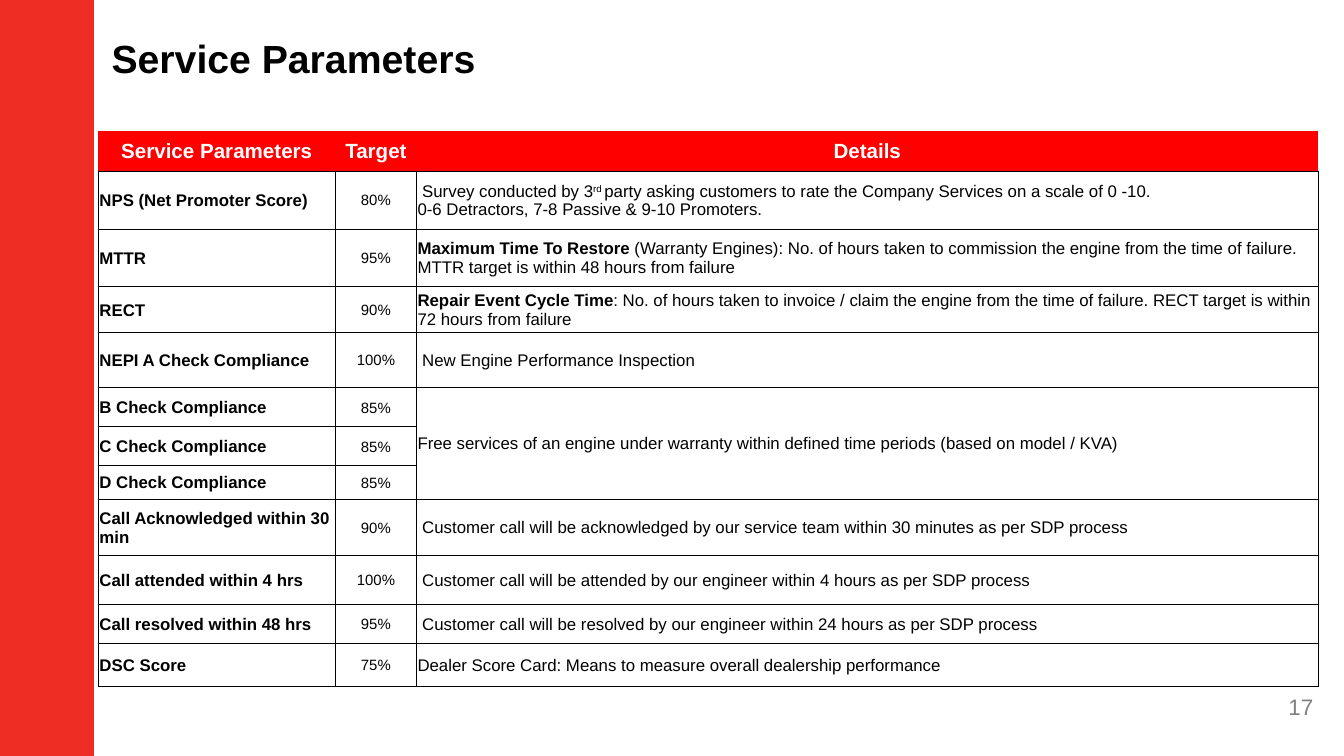
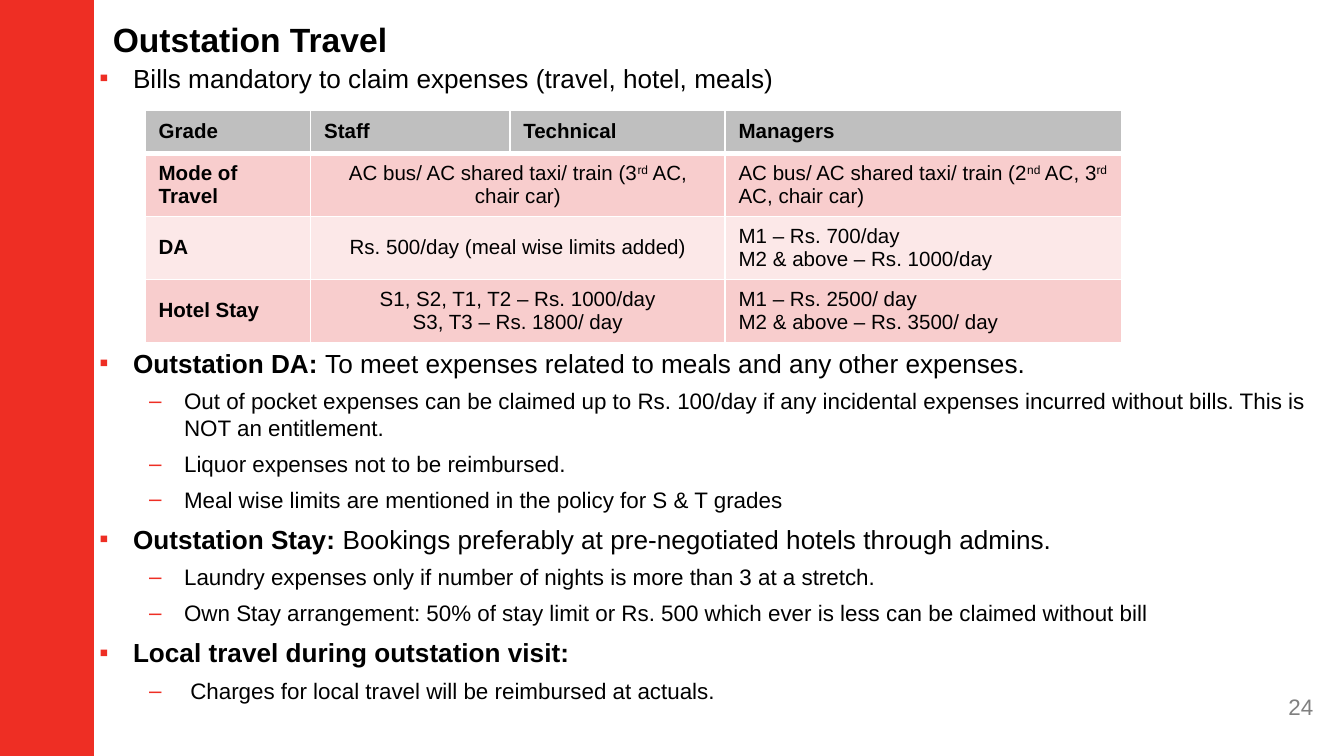
from dataclasses import dataclass

from lxml import etree
from pptx import Presentation
from pptx import util as u
from pptx.dml.color import RGBColor
from pptx.enum import shapes, text
from pptx.oxml.ns import qn

WIDTH, HEIGHT = u.Inches(10), u.Inches(5.625)
FONT = "Arial"
COLORS = {
    "band": "EE2E24", "header": "FF0000", "ink": "000000", "paper": "FFFFFF",
    "number": "808080", "grey": "BFBFBF", "rose": "F8CDCD", "blush": "FCE8E8",
}
LEFT, CENTER, RIGHT = text.PP_ALIGN.LEFT, text.PP_ALIGN.CENTER, text.PP_ALIGN.RIGHT


@dataclass
class Box:
    """An area given in percent of the slide's width and height."""
    left: float
    top: float
    width: float
    height: float

    def place(self):
        return (int(WIDTH * self.left / 100), int(HEIGHT * self.top / 100),
                int(WIDTH * self.width / 100), int(HEIGHT * self.height / 100))


BAND = Box(0, 0, 7, 100)
NUMBER = Box(92.6, 90.84, 6.1, 5.2)


def rgb(name):
    return RGBColor.from_string(COLORS[name])


# Text: a line is a string or a list of (words, style) with style "", "b" or "sup"
def write_line(para, line, size, color="ink", bold=False, align=LEFT):
    para.alignment = align
    spans = [(line, "")] if isinstance(line, str) else line
    for words, style in spans:
        span = para.add_run()
        span.text = words
        span.font.name, span.font.size = FONT, u.Pt(size)
        span.font.bold = bold or style == "b"
        span.font.color.rgb = rgb(color)
        if style == "sup":
            span._r.get_or_add_rPr().set("baseline", "30000")


def next_para(frame, index):
    return frame.paragraphs[0] if index == 0 else frame.add_paragraph()


def text_frame(page, box, inset=True):
    frame = page.shapes.add_textbox(*box.place()).text_frame
    frame.word_wrap = True
    if not inset:
        frame.margin_left = frame.margin_right = 0
        frame.margin_top = frame.margin_bottom = 0
    return frame


# Shared frame of every slide: band, title, page number
def add_page(deck, title, box, size, number):
    page = deck.slides.add_slide(deck.slide_layouts[5])
    band = page.shapes.add_shape(shapes.MSO_SHAPE.RECTANGLE, *BAND.place())
    band.shadow.inherit = False
    band.fill.solid()
    band.fill.fore_color.rgb = rgb("band")
    band.line.fill.background()

    heading = page.shapes.title
    heading.left, heading.top, heading.width, heading.height = box.place()
    frame = heading.text_frame
    frame.word_wrap = True
    frame.auto_size = text.MSO_AUTO_SIZE.NONE
    frame.vertical_anchor = text.MSO_ANCHOR.TOP
    write_line(frame.paragraphs[0], title, size, bold=True)

    write_line(text_frame(page, NUMBER).paragraphs[0], number, 12, "number", align=RIGHT)
    return page


# Tables
def set_borders(cell, borders):
    """Borders map a side (L, R, T, B) to (colour, points); other sides are bare."""
    props = cell._tc.get_or_add_tcPr()
    for index, side in enumerate("LRTB"):
        line = etree.Element(qn(f"a:ln{side}"))
        if side in borders:
            color, points = borders[side]
            line.set("w", str(u.Pt(points)))
            fill = etree.SubElement(line, qn("a:solidFill"))
            etree.SubElement(fill, qn("a:srgbClr")).set("val", COLORS[color])
        else:
            etree.SubElement(line, qn("a:noFill"))
        props.insert(index, line)


def add_grid(page, box, columns, rows, merges):
    """Columns and rows are weights that share out the box."""
    left, top, width, height = box.place()
    table = page.shapes.add_table(len(rows), len(columns), left, top, width, height).table
    table.horz_banding = False
    for column, weight in zip(table.columns, columns):
        column.width = int(width * weight / sum(columns))
    for row, weight in zip(table.rows, rows):
        row.height = int(height * weight / sum(rows))
    for first, last in merges:
        table.cell(*first).merge(table.cell(*last))
    return table


def fill_cell(cell, lines, size, fill, borders, margins=None, **style):
    cell.vertical_anchor = text.MSO_ANCHOR.MIDDLE
    if margins:
        (cell.margin_left, cell.margin_right,
         cell.margin_top, cell.margin_bottom) = map(u.Inches, margins)
    if fill:
        cell.fill.solid()
        cell.fill.fore_color.rgb = rgb(fill)
    else:
        cell.fill.background()
    set_borders(cell, borders)
    for index, line in enumerate(lines):
        write_line(next_para(cell.text_frame, index), line, size, **style)


# Service parameters: name, target, detail lines, row weight
PARAMETERS = [
    ("NPS (Net Promoter Score)", "80%",
     [[(" Survey conducted by 3", ""), ("rd ", "sup"),
       ("party asking customers to rate the Company Services on a scale of 0 -10.", "")],
      "0-6 Detractors, 7-8 Passive & 9-10 Promoters."], 0.43),
    ("MTTR", "95%",
     [[("Maximum Time To Restore", "b"),
       (" (Warranty Engines): No. of hours taken to commission the engine from the time "
        "of failure. MTTR target is within 48 hours from failure", "")]], 0.43),
    ("RECT", "90%",
     [[("Repair Event Cycle Time", "b"),
       (": No. of hours taken to invoice / claim the engine from the time of failure. "
        "RECT target is within 72 hours from failure", "")]], 0.34),
    ("NEPI A Check Compliance", "100%", [" New Engine Performance Inspection"], 0.41),
    ("B Check Compliance", "85%",
     ["Free services of an engine under warranty within defined time periods "
      "(based on model / KVA)"], 0.29),
    ("C Check Compliance", "85%", [], 0.29),
    ("D Check Compliance", "85%", [], 0.25),
    ("Call Acknowledged within 30 min", "90%",
     [" Customer call will be acknowledged by our service team within 30 minutes "
      "as per SDP process"], 0.42),
    ("Call attended within 4 hrs", "100%",
     [" Customer call will be attended by our engineer within 4 hours as per SDP process"], 0.36),
    ("Call resolved within 48 hrs", "95%",
     [" Customer call will be resolved by our engineer within 24 hours as per SDP process"], 0.29),
    ("DSC Score", "75%",
     ["Dealer Score Card: Means to measure overall dealership performance"], 0.32),
]


def add_parameter_table(page, box):
    rows = [0.3] + [entry[3] for entry in PARAMETERS]
    table = add_grid(page, box, [1.77, 0.6, 6.72], rows, [((5, 2), (7, 2))])
    margins = (0.01, 0.01, 0.01, 0)
    rule = ("ink", 0.5)
    for column, name in enumerate(["Service Parameters", "Target", "Details"]):
        fill_cell(table.cell(0, column), [name], 11, "header", {"B": rule}, margins,
                  color="paper", bold=True, align=CENTER)
    borders = dict.fromkeys("LRTB", rule)
    for row, (name, target, details, _) in enumerate(PARAMETERS, 1):
        fill_cell(table.cell(row, 0), [name], 9, None, borders, margins, bold=True)
        fill_cell(table.cell(row, 1), [target], 8, None, borders, margins, align=CENTER)
        fill_cell(table.cell(row, 2), details, 9, None, borders, margins)


# Travel limits: label, staff and technical, managers
LIMITS = [
    ("Mode of Travel",
     [[("AC bus/ AC shared taxi/ train (3", ""), ("rd", "sup"), (" AC, chair car)", "")]],
     [[("AC bus/ AC shared taxi/ train (2", ""), ("nd", "sup"), (" AC, 3", ""),
       ("rd", "sup"), (" AC, chair car)", "")]]),
    ("DA", ["Rs. 500/day (meal wise limits added)"],
     ["M1 – Rs. 700/day", "M2 & above – Rs. 1000/day"]),
    ("Hotel Stay", ["S1, S2, T1, T2 – Rs. 1000/day", "S3, T3 – Rs. 1800/ day"],
     ["M1 – Rs. 2500/ day", "M2 & above – Rs. 3500/ day"]),
]


def add_limit_table(page, box):
    merges = [((row, 1), (row, 2)) for row in range(1, len(LIMITS) + 1)]
    table = add_grid(page, box, [1.23, 1.48, 1.6, 2.95], [0.32] + [0.47] * len(LIMITS), merges)
    thin, thick = ("paper", 1), ("paper", 3)
    borders = dict.fromkeys("LRTB", thin)
    for column, name in enumerate(["Grade", "Staff", "Technical", "Managers"]):
        fill_cell(table.cell(0, column), [name], 11, "grey", borders | {"B": thick}, bold=True)
    for row, (label, staff, managers) in enumerate(LIMITS, 1):
        fill = "rose" if row % 2 else "blush"
        edges = borders | {"T": thick} if row == 1 else borders
        fill_cell(table.cell(row, 0), [label], 11, fill, edges, bold=True)
        fill_cell(table.cell(row, 1), staff, 11, fill, edges, align=CENTER)
        fill_cell(table.cell(row, 2), [], 11, fill, edges)
        fill_cell(table.cell(row, 3), managers, 11, fill, edges)


# Bulleted text: level -> mark, left margin, hanging indent, text size
LEVELS = [("▪", 0.25, -0.25, 14), ("–", 0.63, -0.26, 12)]
INTRO = [(0, "Bills mandatory to claim expenses (travel, hotel, meals)")]
RULES = [
    (0, [("Outstation DA: ", "b"),
         ("To meet expenses related to meals and any other expenses.", "")]),
    (1, "Out of pocket expenses can be claimed up to Rs. 100/day if any incidental expenses "
        "incurred without bills. This is NOT an entitlement."),
    (1, "Liquor expenses not to be reimbursed."),
    (1, "Meal wise limits are mentioned in the policy for S & T grades"),
    (0, [("Outstation Stay: ", "b"),
         ("Bookings preferably at pre-negotiated hotels through admins.", "")]),
    (1, "Laundry expenses only if number of nights is more than 3 at a stretch."),
    (1, "Own Stay arrangement: 50% of stay limit or Rs. 500 which ever is less can be claimed "
        "without bill"),
    (0, [("Local travel during outstation visit:", "b")]),
    (1, " Charges for local travel will be reimbursed at actuals."),
]


def add_bullets(page, box, items):
    frame = text_frame(page, box, inset=False)
    for index, (level, line) in enumerate(items):
        mark, margin, indent, size = LEVELS[level]
        para = next_para(frame, index)
        para.level = level
        props = para._p.get_or_add_pPr()
        props.set("marL", str(u.Inches(margin)))
        props.set("indent", str(u.Inches(indent)))
        color = etree.SubElement(props, qn("a:buClr"))
        etree.SubElement(color, qn("a:srgbClr")).set("val", COLORS["band"])
        etree.SubElement(props, qn("a:buFont")).set("typeface", FONT)
        etree.SubElement(props, qn("a:buChar")).set("char", mark)
        if index:
            para.space_before = u.Pt(size * 0.4)
        write_line(para, line, size)


# Slides
def add_service_slide(deck):
    page = add_page(deck, "Service Parameters", Box(7.3, 3.7, 90, 8), 21, "17")
    add_parameter_table(page, Box(7.3, 17.3, 90.8, 73.5))


def add_travel_slide(deck):
    page = add_page(deck, "Outstation Travel", Box(7.4, 1.6, 45.9, 6.6), 18, "24")
    add_bullets(page, Box(7.4, 8.2, 92.6, 5), INTRO)
    add_limit_table(page, Box(10.8, 14.6, 72.7, 30.7))
    add_bullets(page, Box(7.4, 45.9, 92.6, 47), RULES)


def main():
    deck = Presentation()
    deck.slide_width, deck.slide_height = WIDTH, HEIGHT
    add_service_slide(deck)
    add_travel_slide(deck)
    deck.save("out.pptx")


if __name__ == "__main__":
    main()
